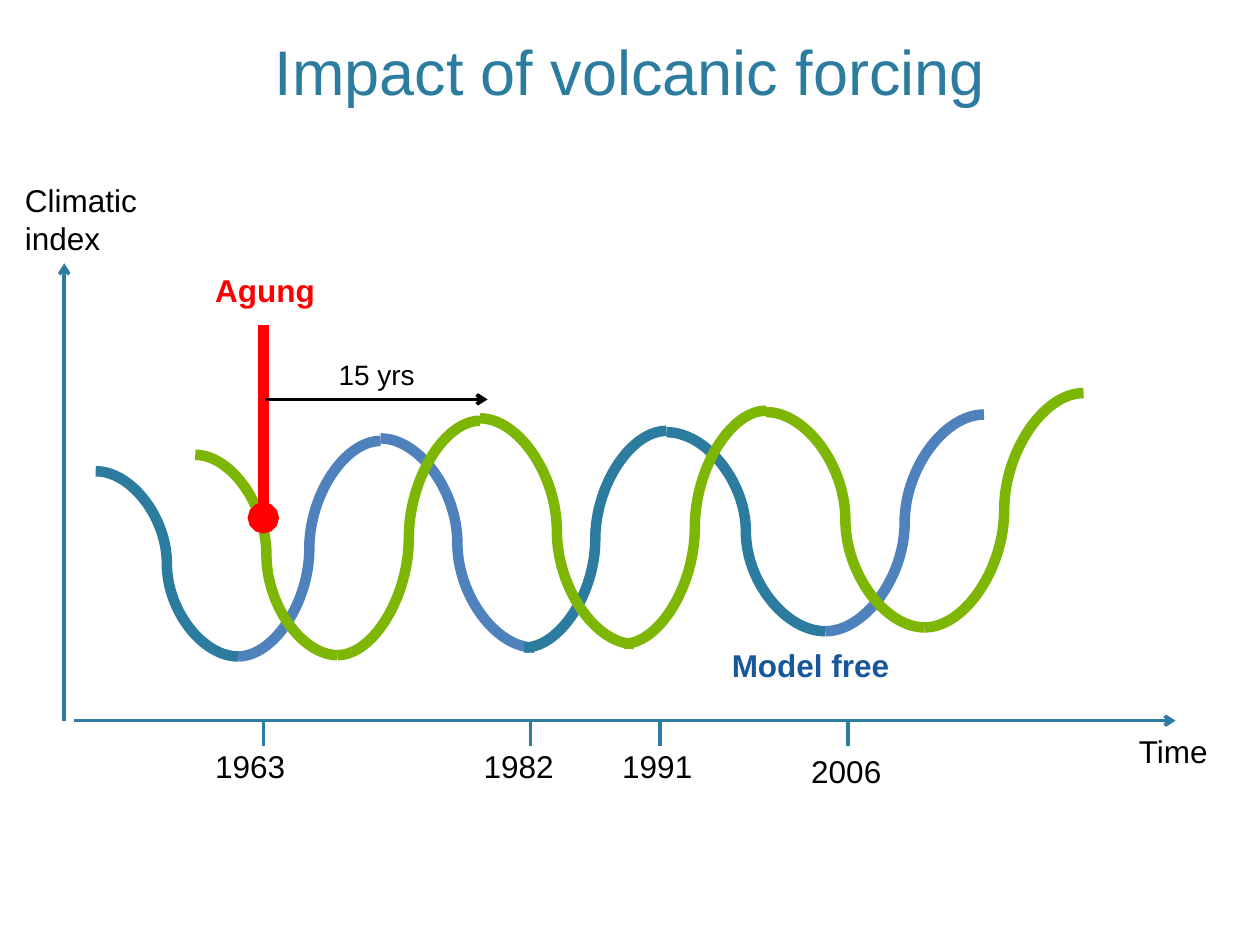
from lxml.etree import SubElement
from pptx import Presentation
from pptx.dml.color import RGBColor
from pptx.enum.shapes import MSO_CONNECTOR
from pptx.enum.text import MSO_ANCHOR, MSO_AUTO_SIZE, PP_ALIGN
from pptx.oxml.ns import qn
from pptx.util import Inches, Pt

COLORS = {
    "teal": "2C7C9F",
    "blue": "4F81BD",
    "navy": "18579B",
    "green": "7EB606",
    "red": "FF0000",
    "black": "000000",
}
FONT = "Arial"

# Left and right end of each half wave, from the left of the wave's box
SPANS = [(0, 1.13), (1.13, 2.26), (2.26, 3.48),
         (3.4, 4.53), (4.53, 5.79), (5.79, 7.05)]
# Start and end height of each half wave, from the top of the wave's box
FREE = [(0.45, 1.92), (1.92, 0.21), (0.19, 1.85),
        (1.85, 0.13), (0.14, 1.72), (1.72, 0)]
FORCED = [(0.49, 2.08), (2.08, 0.22), (0.2, 1.99),
          (1.99, 0.14), (0.15, 1.86), (1.86, 0)]
FREE_HUES = ["teal", "blue", "blue", "teal", "teal", "blue"]
FORCED_HUES = ["green"] * len(SPANS)

# Year, tick and label left, and label top, from the axis corner
YEARS = [("1963", 1.58, 1.1, 0.16), ("1982", 3.7, 3.23, 0.16),
         ("1991", 4.73, 4.33, 0.16), ("2006", 6.22, 5.83, 0.2)]


def rgb(name):
    return RGBColor.from_string(COLORS[name])


def style(para, text, size=18, color="black", bold=False, align=None):
    para.alignment = align
    run = para.add_run()
    run.text = text
    font = run.font
    font.name, font.size, font.bold = FONT, Pt(size), bold
    font.color.rgb = rgb(color)


def label(shapes, text, left, top, width, height=0.4, **form):
    box = shapes.add_textbox(Inches(left), Inches(top),
                             Inches(width), Inches(height))
    frame = box.text_frame
    frame.word_wrap = True
    frame.auto_size = MSO_AUTO_SIZE.SHAPE_TO_FIT_TEXT
    style(frame.paragraphs[0], text, **form)


def stroke(shapes, start, end, color="teal", width=2, tail=None,
           kind=MSO_CONNECTOR.STRAIGHT):
    line = shapes.add_connector(kind, *map(Inches, (*start, *end)))
    line.line.color.rgb = rgb(color)
    line.line.width = Pt(width)
    if tail:
        SubElement(line.line._get_or_add_ln(), qn("a:tailEnd"), type=tail)
    SubElement(line._element.spPr, qn("a:effectLst"))


def title(slide, left, top, width, height):
    head = slide.shapes.title
    head.left, head.top = Inches(left), Inches(top)
    head.width, head.height = Inches(width), Inches(height)
    head.text_frame.vertical_anchor = MSO_ANCHOR.BOTTOM
    style(head.text_frame.paragraphs[0], "Impact of volcanic forcing",
          size=36, color="teal", align=PP_ALIGN.CENTER)


def axes(shapes, left, top, width, height):
    base = top + height
    stroke(shapes, (left, base), (left, top), tail="arrow")
    stroke(shapes, (left + 0.08, base), (left + width, base), tail="arrow")
    label(shapes, "Climatic index", left - 0.41, top - 0.7, 1.57, 0.71)
    label(shapes, "Time", left + width - 0.39, base + 0.04, 1.06)
    for year, tick, side, drop in YEARS:
        stroke(shapes, (left + tick, base), (left + tick, base + 0.2))
        label(shapes, year, left + side, base + drop, 1.34)


def wave(shapes, left, top, levels, hues):
    for (x1, x2), (y1, y2), hue in zip(SPANS, levels, hues):
        stroke(shapes, (left + x1, top + y1), (left + x2, top + y2),
               color=hue, width=6, kind=MSO_CONNECTOR.CURVE)


def event(shapes, left, top):
    """Mark the eruption and the 15 years that follow it."""
    mid = left + 0.48
    label(shapes, "Agung", left, top, 1.73, color="red", bold=True)
    stroke(shapes, (mid, top + 0.48), (mid, top + 2.01),
           color="red", width=6, tail="oval")
    stroke(shapes, (mid + 0.01, top + 1.07), (mid + 1.78, top + 1.07),
           color="black", tail="arrow")
    label(shapes, "15 yrs", mid + 0.5, top + 0.69, 0.87, 0.37, size=16)


def main():
    deck = Presentation()
    deck.slide_width, deck.slide_height = Inches(10), Inches(7.5)
    slide = deck.slides.add_slide(deck.slide_layouts[5])
    shapes = slide.shapes

    title(slide, 0, -0.11, 10, 1.02)
    axes(shapes, 0.51, 2.09, 8.82, 3.63)

    free = shapes.add_group_shape().shapes
    wave(free, 0.76, 3.29, FREE, FREE_HUES)
    label(free, "Model free", 5.71, 5.08, 2.1, color="navy", bold=True)

    wave(shapes.add_group_shape().shapes, 1.55, 3.12, FORCED, FORCED_HUES)
    event(shapes.add_group_shape().shapes, 1.61, 2.1)

    deck.save("out.pptx")


if __name__ == "__main__":
    main()
